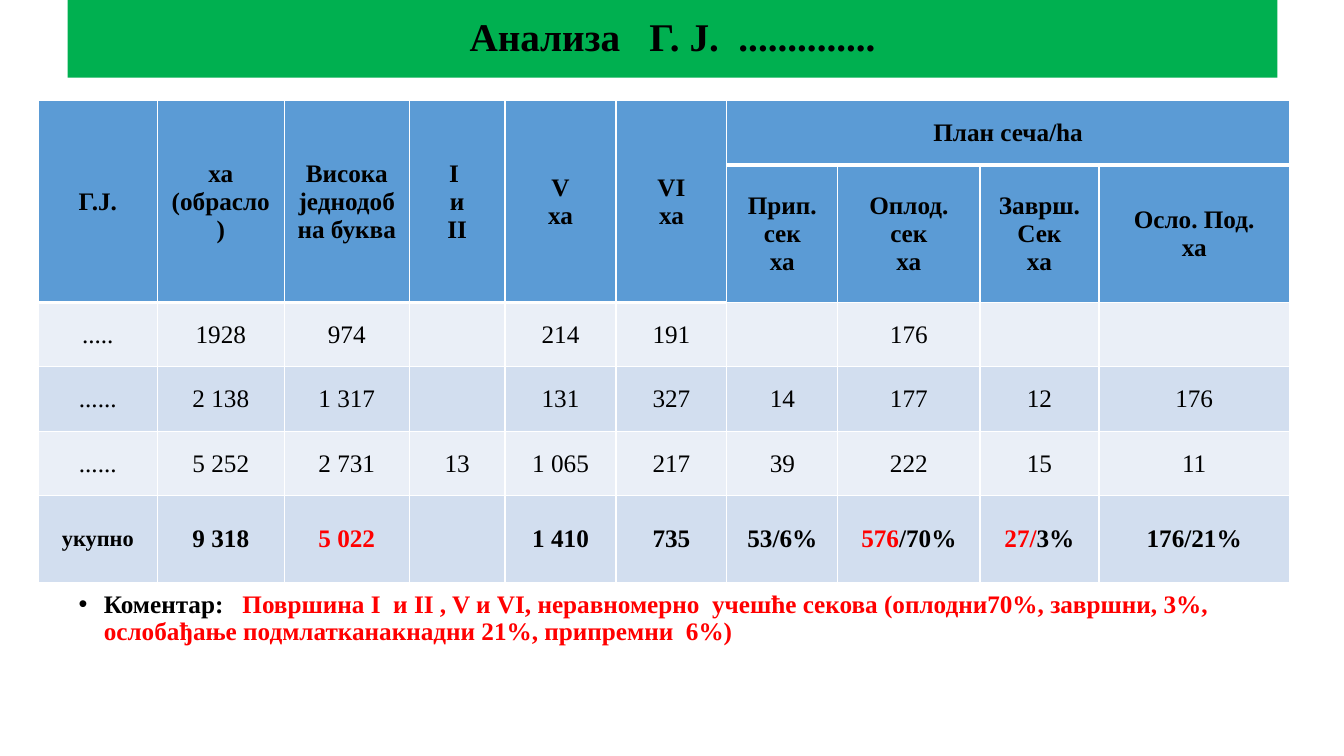
from dataclasses import dataclass

from lxml import etree
from pptx import Presentation
from pptx import util as u
from pptx.dml.color import RGBColor
from pptx.enum import text
from pptx.oxml import ns


@dataclass(frozen=True)
class Theme:
    font: str = "Times New Roman"
    ink: str = "000000"
    red: str = "FF0000"
    green: str = "00B050"
    header: str = "5B9BD5"
    bands: tuple = ("EAEFF7", "D2DEEF")
    border: str = "FFFFFF"
    title_size: int = 28
    size: int = 18
    total_size: int = 16


T = Theme()

TITLE = "Анализа   Г. Ј.  .............."
COMMENT = ("Коментар:", "   Површина I  и II , V и VI, неравномерно  учешће секова "
           "(оплодни70%, завршни, 3%, ослобађање подмлатканакнадни 21%, припремни  6%)")

# Table content: a line break starts a paragraph, text before "|" is red
COLS = [1.18, 1.26, 1.24, 0.95, 1.1, 1.1, 1.1, 1.41, 1.18, 1.89]
ROWS = [0.64, 1.36, 0.64, 0.64, 0.64, 0.86]
HEADER_ROWS = 2
PLAN_COL = 6
CELLS = [
    ["Г.Ј.", "ха\n(обрасло)", "Висока једнодобна буква", "I \nи\nII", "V\nха", "VI\nха",
     "План сеча/ha", "", "", ""],
    [""] * PLAN_COL + ["Прип. сек\nха", "Оплод.\nсек\nха", "Заврш. Сек\nха", "Осло. Под.\nха"],
    [".....", "1928", "974", "", "214", "191", "", "176", "", ""],
    ["......", "2 138", "1 317", "", "131", "327", "14", "177", "12", "176"],
    ["......", "5 252", "2 731", "13", "1 065", "217", "39", "222", "15", "11"],
    ["укупно", "9 318", "5 022|", "", "1 410", "735", "53/6%", "576|/70%", "27/|3%", "176/21%"],
]


def set_attrs(obj, values):
    for name, value in values.items():
        setattr(obj, name, value)


def add_run(p, words, color=T.ink, size=T.size, bold=True):
    r = p.add_run()
    r.text = words
    set_attrs(r.font, {"name": T.font, "size": u.Pt(size), "bold": bold})
    r.font.color.rgb = RGBColor.from_string(color)


def place(sp, left, top, width, height):
    set_attrs(sp, {"left": u.Inches(left), "top": u.Inches(top),
                   "width": u.Inches(width), "height": u.Inches(height)})


def add_title(slide):
    sp = slide.shapes.title
    place(sp, 0.67, 0, 12, 0.77)
    sp.fill.solid()
    sp.fill.fore_color.rgb = RGBColor.from_string(T.green)
    set_attrs(sp.text_frame, {"vertical_anchor": text.MSO_ANCHOR.MIDDLE,
                              "auto_size": text.MSO_AUTO_SIZE.NONE, "word_wrap": True})
    p = sp.text_frame.paragraphs[0]
    set_attrs(p, {"alignment": text.PP_ALIGN.CENTER, "line_spacing": 0.9})
    add_run(p, TITLE, size=T.title_size)


def add_comment(slide):
    sp = slide.placeholders[1]
    place(sp, 0.68, 5.82, 12, 1.36)
    set_attrs(sp.text_frame, {"vertical_anchor": text.MSO_ANCHOR.TOP,
                              "auto_size": text.MSO_AUTO_SIZE.NONE, "word_wrap": True})
    p = sp.text_frame.paragraphs[0]
    set_attrs(p, {"line_spacing": 0.9, "space_before": u.Pt(0)})
    # Hanging bullet
    pPr = p._p.get_or_add_pPr()
    pPr.set("marL", str(u.Inches(0.25)))
    pPr.set("indent", str(u.Inches(-0.25)))
    etree.SubElement(pPr, ns.qn("a:buFont"), typeface="Arial")
    etree.SubElement(pPr, ns.qn("a:buChar"), char="•")
    for words, color in zip(COMMENT, (T.ink, T.red)):
        add_run(p, words, color)


def set_borders(cell, top, bottom):
    tcPr = cell._tc.get_or_add_tcPr()
    for side, width in {"L": 1, "R": 1, "T": top, "B": bottom}.items():
        ln = etree.SubElement(tcPr, ns.qn(f"a:ln{side}"), w=str(u.Pt(width)))
        fill = etree.SubElement(ln, ns.qn("a:solidFill"))
        etree.SubElement(fill, ns.qn("a:srgbClr"), val=T.border)


def rule_below(row, col):
    """Thick rule under the first header row and under the tall header cells."""
    return 3 if row == 0 or (row == 1 and col < PLAN_COL) else 1


def fill_cell(cell, words, color, size, bold):
    set_attrs(cell, {"vertical_anchor": text.MSO_ANCHOR.MIDDLE,
                     "margin_left": u.Inches(0.13), "margin_right": u.Inches(0.13),
                     "margin_top": u.Inches(0.05), "margin_bottom": u.Inches(0.05)})
    cell.fill.solid()
    cell.fill.fore_color.rgb = RGBColor.from_string(color)
    tf = cell.text_frame
    for i, line in enumerate(words.split("\n")):
        p = tf.add_paragraph() if i else tf.paragraphs[0]
        p.alignment = text.PP_ALIGN.CENTER
        red, _, black = line.rpartition("|")
        for part, ink in ((red, T.red), (black, T.ink)):
            if part:
                add_run(p, part, ink, size, bold)


def add_table(slide):
    frame = slide.shapes.add_table(len(ROWS), len(COLS), u.Inches(0.38), u.Inches(1),
                                   u.Inches(sum(COLS)), u.Inches(sum(ROWS)))
    table = frame.table
    for column, width in zip(table.columns, COLS):
        column.width = u.Inches(width)
    for row, height in zip(table.rows, ROWS):
        row.height = u.Inches(height)

    # Header spans
    for col in range(PLAN_COL):
        table.cell(0, col).merge(table.cell(1, col))
    table.cell(0, PLAN_COL).merge(table.cell(0, len(COLS) - 1))

    last = len(ROWS) - 1
    for row, line in enumerate(CELLS):
        is_header = row < HEADER_ROWS
        color = T.header if is_header else T.bands[row % 2]
        for col, words in enumerate(line):
            cell = table.cell(row, col)
            size = T.total_size if (row, col) == (last, 0) else T.size
            set_borders(cell, rule_below(row - 1, col), rule_below(row, col))
            fill_cell(cell, words, color, size, is_header or row == last)


def main():
    prs = Presentation()
    set_attrs(prs, {"slide_width": u.Inches(13.33), "slide_height": u.Inches(7.5)})
    slide = prs.slides.add_slide(prs.slide_layouts[1])
    add_title(slide)
    add_comment(slide)
    add_table(slide)
    prs.save("out.pptx")


if __name__ == "__main__":
    main()
